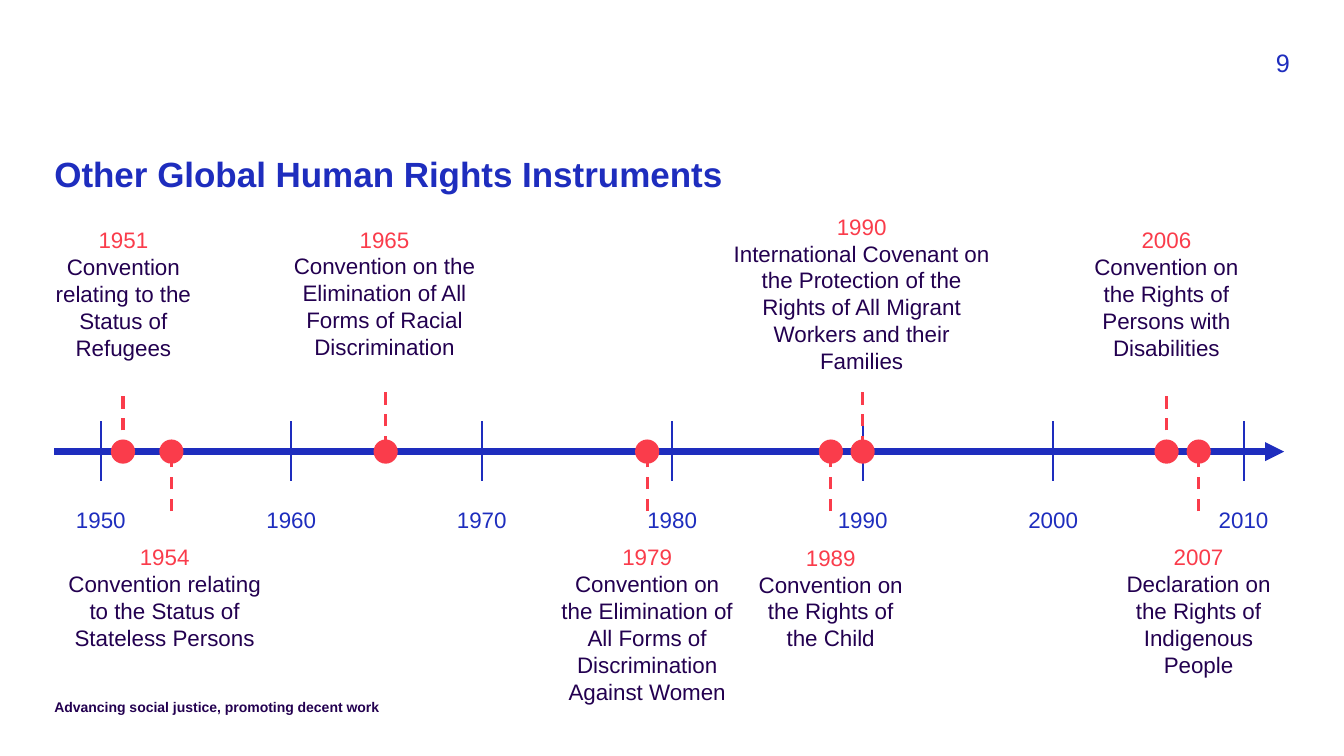
import pptx
import pptx.dml.color
import pptx.enum.dml
import pptx.enum.shapes
import pptx.enum.text
import pptx.oxml
import pptx.oxml.ns
import pptx.util
from dataclasses import dataclass

Cm = pptx.util.Cm
ALIGN = pptx.enum.text.PP_ALIGN
ANCHOR = pptx.enum.text.MSO_ANCHOR


@dataclass(frozen=True)
class Theme:
    font: str = "Arial"
    blue: str = "1E2DBE"
    red: str = "FA3C4B"
    ink: str = "230050"
    title: int = 25
    page: int = 18
    body: int = 16
    footer: int = 10


theme = Theme()
presentation = pptx.Presentation()
presentation.slide_width = Cm(33.87)
presentation.slide_height = Cm(19.05)
slide = presentation.slides.add_slide(presentation.slide_layouts[5])


def write(text, *, at, size, colors, bold=False, align=ALIGN.LEFT,
          anchor=ANCHOR.TOP, inset=(0, 0), spacing=None, grow=False, box=None):
    """Write one paragraph per line of text, each in its own colour."""
    left, top, width, height = map(Cm, at)
    if box is None:
        box = slide.shapes.add_textbox(left, top, width, height)
    box.left, box.top, box.width, box.height = left, top, width, height
    frame = box.text_frame
    frame.text = text
    frame.word_wrap = True
    frame.vertical_anchor = anchor
    sizing = pptx.enum.text.MSO_AUTO_SIZE
    frame.auto_size = sizing.SHAPE_TO_FIT_TEXT if grow else sizing.NONE
    frame.margin_left = frame.margin_right = Cm(inset[0])
    frame.margin_top = frame.margin_bottom = Cm(inset[1])
    for paragraph, color in zip(frame.paragraphs, colors):
        paragraph.alignment = align
        paragraph.line_spacing = spacing
        font = paragraph.runs[0].font
        font.name, font.size, font.bold = theme.font, pptx.util.Pt(size), bold
        font.color.rgb = pptx.dml.color.RGBColor.from_string(color)


def draw_line(start, end, color, weight):
    line = slide.shapes.add_connector(
        pptx.enum.shapes.MSO_CONNECTOR.STRAIGHT, *map(Cm, start + end))
    line.line.color.rgb = pptx.dml.color.RGBColor.from_string(color)
    line.line.width = pptx.util.Pt(weight)
    line._element.spPr.append(pptx.oxml.parse_xml(
        f"<a:effectLst {pptx.oxml.ns.nsdecls('a')}/>"))
    return line


# Title, footer and page number
write("Other Global Human Rights Instruments", box=slide.shapes.title,
      at=(1.37, 3.96, 31.14, 2.01), size=theme.title, colors=[theme.blue],
      bold=True, spacing=0.9)
write("Advancing social justice, promoting decent work",
      at=(1.37, 17.6, 15.57, 0.5), size=theme.footer, colors=[theme.ink], bold=True)
write("9", at=(31.01, 1.19, 1.5, 0.8), size=theme.page, colors=[theme.blue],
      align=ALIGN.RIGHT)

centred = dict(size=theme.body, align=ALIGN.CENTER, anchor=ANCHOR.MIDDLE,
               inset=(0.25, 0.13), grow=True)

# Time axis with an arrowhead
AXIS_Y = 11.38
axis = draw_line((1.37, AXIS_Y), (32.36, AXIS_Y), theme.blue, 4.5)
axis.line._get_or_add_ln().append(pptx.oxml.parse_xml(
    f"<a:tailEnd {pptx.oxml.ns.nsdecls('a')} type='triangle'/>"))

# Decade ticks and labels
for step, decade in enumerate(range(1950, 2011, 10)):
    decade_x = 2.54 + 4.8 * step
    draw_line((decade_x, 10.62), (decade_x, 12.12), theme.blue, 1.5)
    write(str(decade), at=(decade_x - 1.13, 12.63, 2.26, 0.94),
          colors=[theme.blue], **centred)

# Instruments: year, name, dot x, stem tip y, caption box
instruments = [
    (1951, "Convention relating to the Status of Refugees",
     3.1, 9.83, (0.66, 5.56, 4.9, 3.68)),
    (1954, "Convention relating to the Status of Stateless Persons",
     4.32, 12.88, (1.19, 13.54, 5.92, 3)),
    (1965, "Convention on the Elimination of All Forms of Racial Discrimination",
     9.72, 9.73, (6.73, 5.54, 5.92, 3.68)),
    (1979, "Convention on the Elimination of All Forms of Discrimination Against Women",
     16.31, 12.88, (13.86, 13.54, 4.9, 4.37)),
    (1989, "Convention on the Rights of the Child",
     20.94, 12.88, (18.85, 13.56, 4.17, 3)),
    (1990, "International Covenant on the Protection of the Rights of All "
           "Migrant Workers and their Families",
     21.74, 9.73, (18.16, 5.21, 7.11, 4.37)),
    (2006, "Convention on the Rights of Persons with Disabilities",
     29.4, 9.83, (27.31, 5.56, 4.17, 3.68)),
    (2007, "Declaration on the Rights of Indigenous People",
     30.21, 12.88, (28.12, 13.54, 4.17, 3.68)),
]
DOT = 0.61
STEM = 1.57
for year, name, event_x, tip_y, caption in instruments:
    dot = slide.shapes.add_shape(
        pptx.enum.shapes.MSO_SHAPE.OVAL, Cm(event_x - DOT / 2),
        Cm(AXIS_Y - DOT / 2), Cm(DOT), Cm(DOT))
    dot.shadow.inherit = False
    dot.fill.solid()
    dot.fill.fore_color.rgb = pptx.dml.color.RGBColor.from_string(theme.red)
    dot.line.fill.background()

    # Each stem is drawn upwards, so its dashes start at the lower end
    stem_top, stem_bottom = (
        (tip_y, tip_y + STEM) if tip_y < AXIS_Y else (tip_y - STEM, tip_y))
    stem = draw_line((event_x, stem_bottom), (event_x, stem_top), theme.red, 2.25)
    stem.line.dash_style = pptx.enum.dml.MSO_LINE.DASH

    write(f"{year}\n{name}", at=caption, colors=[theme.red, theme.ink], **centred)

presentation.save("out.pptx")
